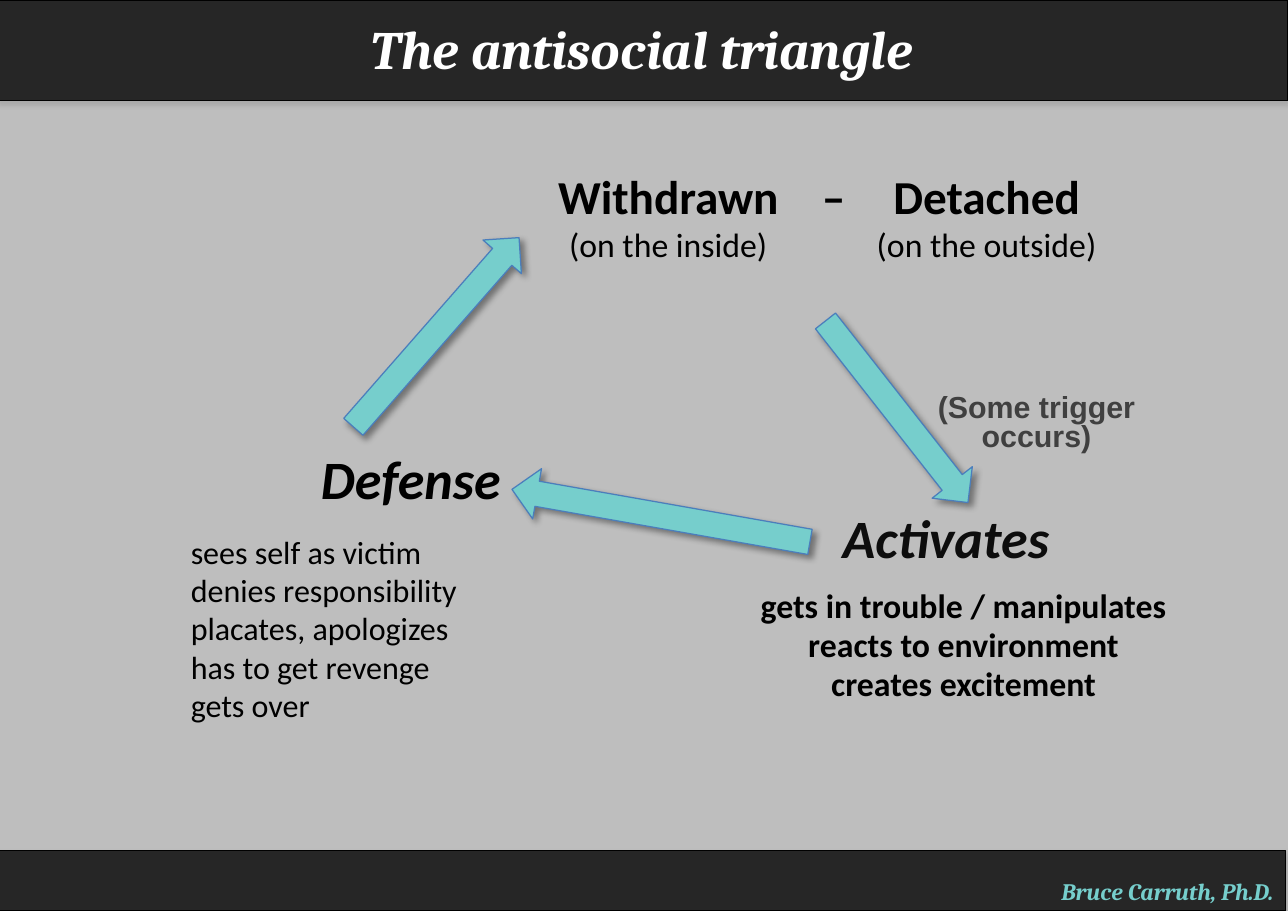
import pptx
import pptx.dml.color
import pptx.enum.shapes
import pptx.enum.text
import pptx.oxml
import pptx.util

PX = 9144  # 100 px to the inch
KIND = pptx.enum.shapes.MSO_SHAPE
ALIGN = pptx.enum.text.PP_ALIGN
ANCHOR = pptx.enum.text.MSO_ANCHOR
TEAL, DARK, BLACK = "76CECC", "262626", "000000"
NS = "http://schemas.openxmlformats.org/drawingml/2006/main"


def color(code):
    return pptx.dml.color.RGBColor.from_string(code)


def place(shape, box):
    shape.left, shape.top, shape.width, shape.height = (n * PX for n in box)


def shade(shape, code, alpha, blur, dist, angle):
    """Cast an outer shadow: alpha in percent, blur and dist in points."""
    shape.shadow.inherit = False
    effects = shape.element.spPr.find(f"{{{NS}}}effectLst")
    effects.append(pptx.oxml.parse_xml(
        f'<a:outerShdw xmlns:a="{NS}" blurRad="{int(blur * 12700)}" '
        f'dist="{int(dist * 12700)}" dir="{angle * 60000}" rotWithShape="0">'
        f'<a:srgbClr val="{code}"><a:alpha val="{alpha * 1000}"/></a:srgbClr>'
        '</a:outerShdw>'))


def draw(slide, kind, box, fill, line):
    shape = slide.shapes.add_shape(kind, *(n * PX for n in box))
    shape.fill.solid()
    shape.fill.fore_color.rgb = color(fill)
    shape.line.color.rgb = color(line)
    shape.line.width = pptx.util.Pt(0.75)
    return shape


def write(shape, lines, size, font="Calibri", code=BLACK, bold=False,
          slant=False, align=ALIGN.CENTER, anchor=ANCHOR.TOP, space=1.0, gap=0):
    """Fill a shape with one paragraph a line; a line may be (text, size, bold)."""
    frame = shape.text_frame
    frame.word_wrap = True
    frame.auto_size = pptx.enum.text.MSO_AUTO_SIZE.NONE
    frame.vertical_anchor = anchor
    for i, line in enumerate(lines):
        text, pts, heavy = (line, size, bold) if isinstance(line, str) else line
        para = frame.add_paragraph() if i else frame.paragraphs[0]
        para.alignment = align
        para.line_spacing = space
        para.space_before = pptx.util.Pt(gap)
        run = para.add_run()
        run.text = text
        run.font.name = font
        run.font.size = pptx.util.Pt(pts)
        run.font.bold = heavy
        run.font.italic = slant
        run.font.color.rgb = color(code)


def label(slide, box, lines, size, **look):
    text = slide.shapes.add_textbox(*(n * PX for n in box))
    write(text, lines, size, **look)


def list_in(holder, box, lines, size, **look):
    """Turn a body placeholder into a list without bullets or indents."""
    place(holder, box)
    write(holder, lines, size, **look)
    for para in holder.text_frame.paragraphs:
        props = para._p.get_or_add_pPr()
        props.set("marL", "0")
        props.set("indent", "0")
        props.append(pptx.oxml.parse_xml(f'<a:buNone xmlns:a="{NS}"/>'))


def bar(slide, box):
    shape = draw(slide, KIND.RECTANGLE, box, DARK, BLACK)
    shade(shape, "808080", 35, 3.1, 1.8, 90)
    return shape


def header(slide, box):
    left, top, width, height = box
    bar(slide, box)
    title = slide.shapes.title
    title.element.getparent().append(title.element)  # in front of the bar
    place(title, (left + 14, top + 8, width - 29, height - 8))
    write(title, ["The antisocial triangle"], 32, font="Cambria",
          code="FFFFFF", bold=True, slant=True)


def footer(slide, box):
    write(bar(slide, box), ["Bruce Carruth, Ph.D."], 14, font="Cambria",
          code=TEAL, bold=True, slant=True, align=ALIGN.RIGHT,
          anchor=ANCHOR.BOTTOM)


def arrow(slide, box, turn):
    shape = draw(slide, KIND.DOWN_ARROW, box, TEAL, "4B7EBC")
    shape.rotation = turn
    shade(shape, BLACK, 40, 4, 3, 45)


def apex(slide, box):
    """Two headed columns with a dash between them."""
    left, top, width, height = box
    col = 240
    label(slide, (left, top, col, height),
          [("Withdrawn", 28, True), ("(on the inside)", 20, False)], 28)
    label(slide, (left + width - col, top, col, height),
          [("Detached", 28, True), ("(on the outside)", 20, False)], 28)
    label(slide, (left + 236, top, 40, 57), ["–"], 28, bold=True)


def active(slide, holder, box):
    left, top, width, height = box
    label(slide, (left + 92, top, 229, 54), ["Activates"], 32, code="0D0D0D",
          bold=True, slant=True, space=0.8)
    label(slide, (left + 150, top - 101, 262, 59), ["(Some trigger occurs)"],
          18, font="Arial", code="404040", bold=True, space=0.8)
    list_in(holder, (left, top + 62, width, height - 62),
            ["gets in trouble / manipulates", "reacts to environment",
             "creates excitement"], 20, bold=True, space=0.8, gap=4)


def defense(slide, holder, box):
    left, top, width, height = box
    label(slide, (left, top, 333, 54), ["Defense"], 32, bold=True, slant=True,
          align=ALIGN.RIGHT, space=0.8)
    list_in(holder, (left + 58, top + 61, width - 58, height - 61),
            ["sees self as victim", "denies responsibility",
             "placates, apologizes", "has to get revenge", "gets over"],
            19, align=ALIGN.LEFT)


def main():
    deck = pptx.Presentation()
    deck.slide_width, deck.slide_height = 1060 * PX, 750 * PX
    slide = deck.slides.add_slide(deck.slide_layouts[3])
    slide.background.fill.solid()
    slide.background.fill.fore_color.rgb = color("BEBEBE")
    first, second = slide.placeholders[1], slide.placeholders[2]

    header(slide, (-2, 0, 1062, 83))
    footer(slide, (-2, 700, 1060, 50))
    arrow(slide, (523, 300, 42, 249), 100)
    arrow(slide, (717, 244, 42, 190), 321.9)
    arrow(slide, (338, 170, 42, 207), 221.2)
    apex(slide, (430, 133, 502, 121))
    active(slide, first, (572, 421, 442, 166))
    defense(slide, second, (89, 372, 386, 231))
    deck.save("out.pptx")


if __name__ == "__main__":
    main()
